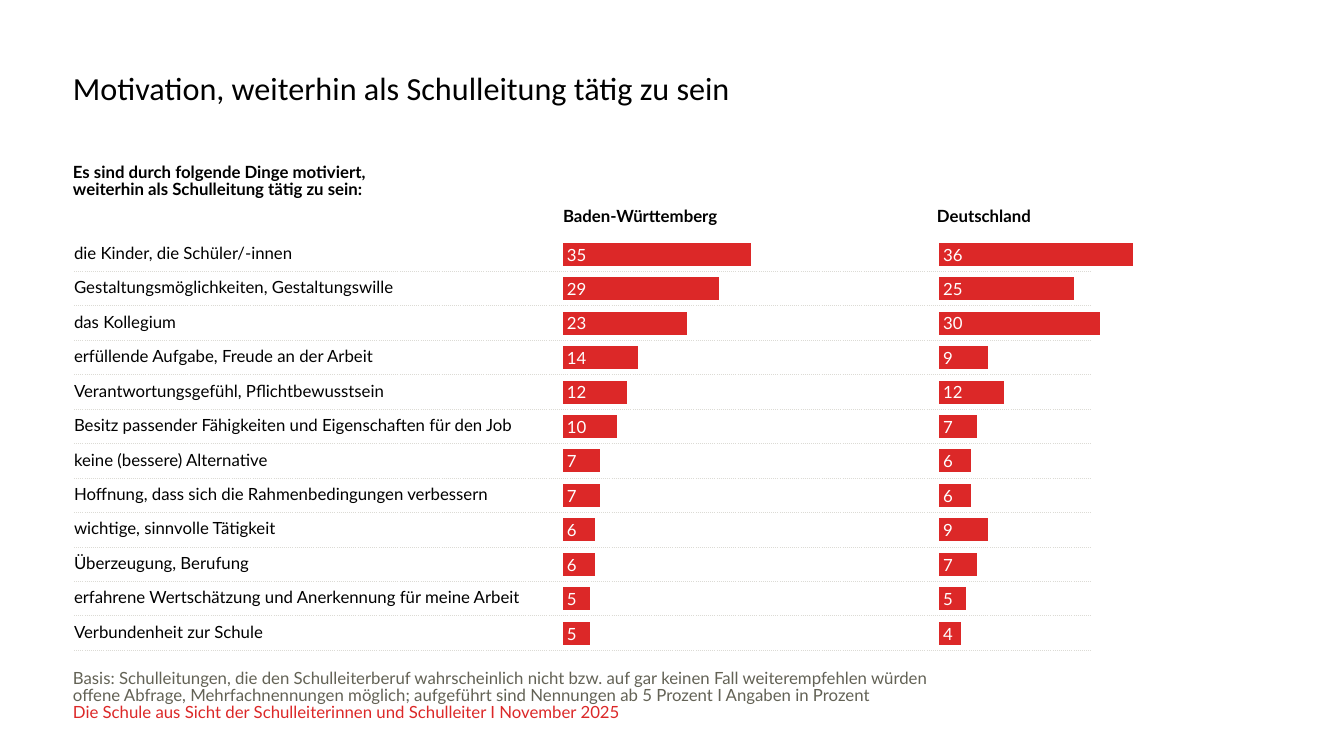
from lxml.etree import SubElement as Sub
from pptx import Presentation
from pptx.chart.data import CategoryChartData as Data
from pptx.dml.color import RGBColor as RGB
from pptx.enum.chart import XL_CHART_TYPE as Kind, XL_LABEL_POSITION as Pos
from pptx.enum.text import MSO_ANCHOR as Anchor
from pptx.oxml import parse_xml
from pptx.oxml.ns import nsdecls, qn
from pptx.util import Pt

TITLE = "Motivation, weiterhin als Schulleitung tätig zu sein"
LEAD = ["Es sind durch folgende Dinge motiviert,",
        "weiterhin als Schulleitung tätig zu sein:"]
HEADS = ["Baden-Württemberg", "", "Deutschland"]
ROWS = [
    ("die Kinder, die Schüler/-innen", 35, 36),
    ("Gestaltungsmöglichkeiten, Gestaltungswille", 29, 25),
    ("das Kollegium", 23, 30),
    ("erfüllende Aufgabe, Freude an der Arbeit", 14, 9),
    ("Verantwortungsgefühl, Pflichtbewusstsein", 12, 12),
    ("Besitz passender Fähigkeiten und Eigenschaften für den Job", 10, 7),
    ("keine (bessere) Alternative", 7, 6),
    ("Hoffnung, dass sich die Rahmenbedingungen verbessern", 7, 6),
    ("wichtige, sinnvolle Tätigkeit", 6, 9),
    ("Überzeugung, Berufung", 6, 7),
    ("erfahrene Wertschätzung und Anerkennung für meine Arbeit", 5, 5),
    ("Verbundenheit zur Schule", 5, 4),
]
NOTES = [
    ("Basis: Schulleitungen, die den Schulleiterberuf wahrscheinlich nicht bzw. "
     "auf gar keinen Fall weiterempfehlen würden", "grey"),
    ("offene Abfrage, Mehrfachnennungen möglich; aufgeführt sind Nennungen "
     "ab 5 Prozent I Angaben in Prozent", "grey"),
    ("Die Schule aus Sicht der Schulleiterinnen und Schulleiter I November 2025", "red"),
]
COLORS = {"black": "000000", "white": "FFFFFF", "red": "DC2828",
          "grey": "636255", "rule": "DCDBD5"}
PLAIN = "{2D5ABB26-0587-4C30-8999-92F81FD0307C}"
SPAN = 70
PLOT = {"x": 0.121, "y": 0.107, "w": 0.823, "h": 0.819}


def px(n):
    return round(n * 914400 / 100.8)


def rgb(name):
    return RGB.from_string(COLORS[name])


def style(font, size=12, color="black", face="Lato", bold=False):
    font.size, font.name, font.bold = Pt(size), face, bold
    font.color.rgb = rgb(color)


def write(frame, lines, gap=0.85, **look):
    frame.text = "\n".join(text for text, _ in lines)
    for para, (_, color) in zip(frame.paragraphs, lines):
        para.line_spacing = gap
        for run in para.runs:
            style(run.font, color=color, **look)
        if not para.runs:
            Sub(para._p, qn("a:endParaRPr")).set("sz", "1200")


def box(slide, at, lines, **look):
    frame = slide.shapes.add_textbox(*map(px, at)).text_frame
    frame.word_wrap = True
    frame.margin_left = frame.margin_right = frame.margin_top = frame.margin_bottom = 0
    write(frame, lines, **look)


def grid(slide, at, cols, cells, pad=0, anchor=Anchor.MIDDLE, fill=None, **look):
    table = slide.shapes.add_table(len(cells), len(cols), *map(px, at)).table
    table.first_row = table.horz_banding = False
    table._tbl.tblPr.find(qn("a:tableStyleId")).text = PLAIN
    for col, wide in zip(table.columns, cols):
        col.width = px(wide)
    for row, texts in zip(table.rows, cells):
        row.height = px(at[3] / len(cells))
        for cell, lines in zip(row.cells, texts):
            cell.margin_left = cell.margin_right = 0
            cell.margin_top = cell.margin_bottom = px(pad)
            cell.vertical_anchor = anchor
            if fill:
                cell.fill.solid()
                cell.fill.fore_color.rgb = rgb(fill)
            else:
                cell.fill.background()
            write(cell.text_frame, [(line, "black") for line in lines], **look)
    return table


def rule(cell, side):
    line = parse_xml(
        f'<a:{side} {nsdecls("a")} w="9525"><a:solidFill>'
        f'<a:srgbClr val="{COLORS["rule"]}"/></a:solidFill>'
        f'<a:prstDash val="sysDot"/></a:{side}>')
    cell._tc.get_or_add_tcPr().insert(0, line)


def bars(slide, at):
    data = Data()
    data.categories = [str(i + 1) for i in range(len(ROWS))]
    data.add_series("Baden-Württemberg", [bw for _, bw, _ in ROWS])
    data.add_series("Abstand", [SPAN - bw for _, bw, _ in ROWS])
    data.add_series("Deutschland", [de for _, _, de in ROWS])
    chart = slide.shapes.add_chart(Kind.BAR_STACKED, *map(px, at), data).chart
    chart.has_legend = chart.has_title = False
    style(chart.font)
    chart.category_axis.reverse_order = True
    chart.category_axis.visible = False
    axis = chart.value_axis
    axis.minimum_scale, axis.maximum_scale, axis.major_unit = 0, 120, 10
    axis.has_major_gridlines = axis.visible = False
    plot = chart.plots[0]
    plot.gap_width, plot.overlap, plot.vary_by_categories = 50, 100, False
    for part, color in zip(plot.series, ("red", "white", "red")):
        part.format.fill.solid()
        part.format.fill.fore_color.rgb = rgb(color)
        if color == "red":
            tags = part.data_labels
            tags.show_value, tags.position = True, Pos.INSIDE_BASE
            style(tags.font, color="white")
    area = chart._chartSpace.chart.plotArea
    for old in area.findall(qn("c:layout")):
        area.remove(old)
    sizes = "".join(f'<c:{k} val="{v}"/>' for k, v in PLOT.items())
    area.insert(0, parse_xml(
        f'<c:layout {nsdecls("c")}><c:manualLayout><c:layoutTarget val="inner"/>'
        f'<c:xMode val="edge"/><c:yMode val="edge"/>{sizes}'
        f'</c:manualLayout></c:layout>'))


def main():
    deck = Presentation()
    deck.slide_width, deck.slide_height = px(1344), px(756)
    slide = deck.slides.add_slide(deck.slide_layouts[6])
    cells = [[[name]] for name, _, _ in ROWS] + [[[""]]]
    items = grid(slide, (74, 237, 1017, 448), [1017], cells)
    last = len(ROWS)
    for i in range(last + 1):
        if i < last:
            rule(items.cell(i, 0), "lnB")
        if i > 0:
            rule(items.cell(i, 0), "lnT")
    box(slide, (73, 73, 1231, 92), [(TITLE, "black")], gap=0.9, size=23, face="Calibri")
    grid(slide, (73, 165, 732, 34), [732], [[LEAD]], anchor=Anchor.BOTTOM, bold=True)
    bars(slide, (468, 183, 784, 505))
    box(slide, (73, 671, 1243, 68), NOTES)
    grid(slide, (563, 202, 616, 28), [261, 113, 242], [[[head] for head in HEADS]],
         pad=4, anchor=Anchor.TOP, fill="white", gap=1.0, bold=True)
    deck.save("out.pptx")


if __name__ == "__main__":
    main()
